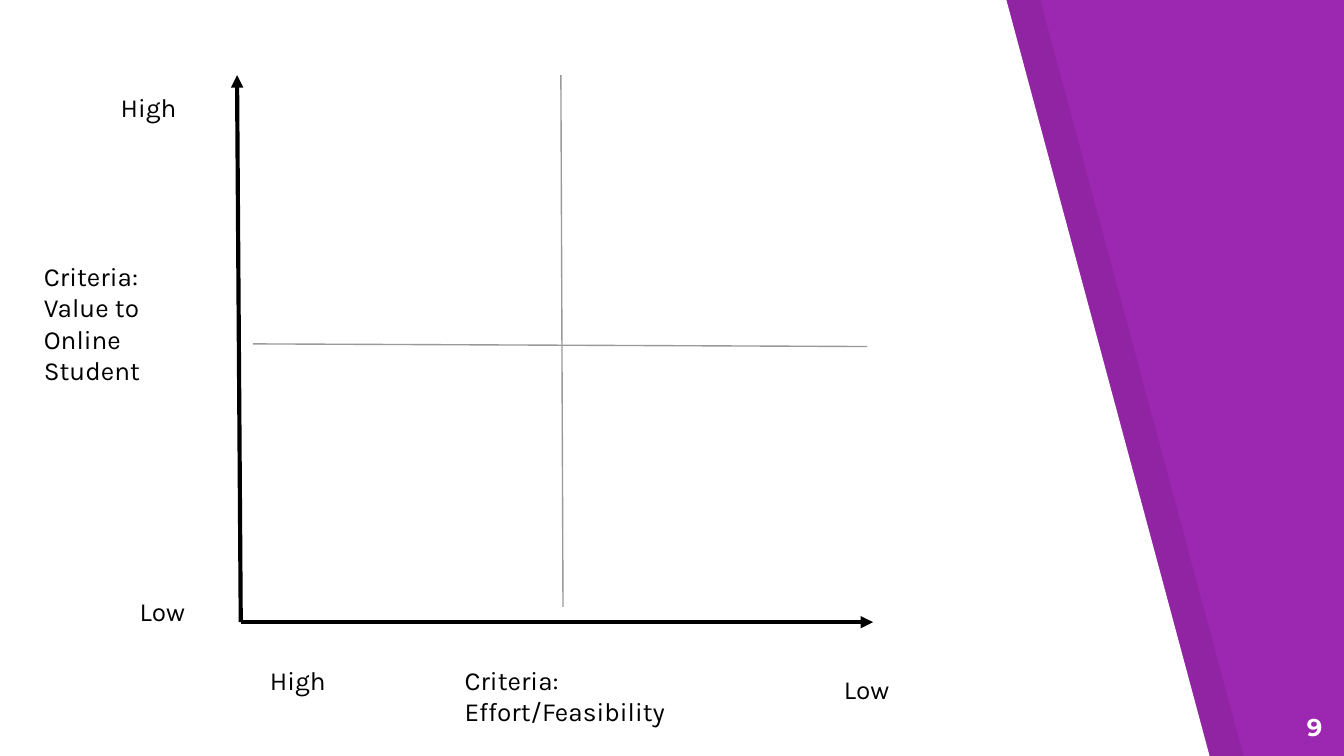
from lxml.etree import SubElement
from pptx import Presentation
from pptx.dml.color import RGBColor
from pptx.enum.shapes import MSO_CONNECTOR
from pptx.enum.text import MSO_ANCHOR, PP_ALIGN
from pptx.oxml.ns import qn
from pptx.util import Cm, Pt

PURPLE = RGBColor(0x9C, 0x27, 0xB0)
WHITE = RGBColor(0xFF, 0xFF, 0xFF)
BLACK = RGBColor(0x00, 0x00, 0x00)
GREY = RGBColor(0x99, 0x99, 0x99)

# Content: lengths in centimetres
PAGE_WIDTH, PAGE_HEIGHT = 25.4, 14.29
PANEL_TOP_EDGE, PANEL_BOTTOM_EDGE = 19.02, 22.86
BAND_OFFSET = 0.64

AXES = [  # start, end
    ((4.55, 11.76), (4.48, 1.42)),
    ((4.55, 11.76), (16.5, 11.76)),
]
DIVIDERS = [
    ((4.78, 6.5), (16.39, 6.55)),
    ((10.64, 11.47), (10.6, 1.42)),
]
LABELS = [  # text, left, top, width, height
    ("Low", 2.39, 11.0, 1.52, 0.76),
    ("High", 2.03, 1.48, 1.88, 0.76),
    ("High", 4.85, 12.3, 2.13, 0.76),
    ("Low", 15.7, 12.47, 2.31, 0.58),
    ("Criteria: Value to Online Student", 0.58, 4.67, 3.33, 2.36),
    ("Criteria: Effort/Feasibility", 8.53, 12.3, 4.85, 1.47),
]
PAGE_NUMBER = ("9", 23.72, 13.19, 1.52, 1.1)


def add_panel(page, left, color, opacity=None):
    """Slanted panel reaching from its left edge to the slanted right side."""
    corners = [(0, PAGE_HEIGHT), (PANEL_BOTTOM_EDGE, PAGE_HEIGHT), (PANEL_TOP_EDGE, 0)]
    builder = page.shapes.build_freeform(Cm(left), 0)
    builder.add_line_segments([(Cm(left + x), Cm(y)) for x, y in corners])
    panel = builder.convert_to_shape()
    panel.shadow.inherit = False
    panel.fill.solid()
    panel.fill.fore_color.rgb = color
    panel.line.fill.background()
    if opacity is not None:
        color_element = panel.fill._xPr.find(".//" + qn("a:srgbClr"))
        SubElement(color_element, qn("a:alpha"), val=str(opacity * 1000))


def add_line(page, start, end, color, width, arrow=False):
    line = page.shapes.add_connector(
        MSO_CONNECTOR.STRAIGHT, *(Cm(value) for value in start + end))
    line.line.color.rgb = color
    line.line.width = Pt(width)
    if arrow:
        SubElement(line.line._get_or_add_ln(), qn("a:tailEnd"), type="triangle")
    SubElement(line._element.spPr, qn("a:effectLst"))


def add_text(page, text, left, top, width, height, font="Karla", size=14,
             color=BLACK, bold=False, align=PP_ALIGN.LEFT, anchor=MSO_ANCHOR.TOP):
    box = page.shapes.add_textbox(Cm(left), Cm(top), Cm(width), Cm(height))
    frame = box.text_frame
    frame.word_wrap = True
    frame.vertical_anchor = anchor
    frame.margin_left = frame.margin_right = Cm(0.25)
    frame.margin_top = frame.margin_bottom = Cm(0.25)
    para = frame.paragraphs[0]
    para.text = text
    para.alignment = align
    para.font.name = font
    para.font.size = Pt(size)
    para.font.bold = bold
    para.font.color.rgb = color


def main():
    deck = Presentation()
    deck.slide_width, deck.slide_height = Cm(PAGE_WIDTH), Cm(PAGE_HEIGHT)
    page = deck.slides.add_slide(deck.slide_layouts[6])

    # Background: purple, a darker band, then the white panel
    page.background.fill.solid()
    page.background.fill.fore_color.rgb = PURPLE
    add_panel(page, BAND_OFFSET, BLACK, opacity=7)
    add_panel(page, 0, WHITE)

    # Page number
    add_text(page, *PAGE_NUMBER, font="Montserrat", size=13, color=WHITE, bold=True,
             align=PP_ALIGN.RIGHT, anchor=MSO_ANCHOR.MIDDLE)

    # Matrix: axes, labels and quadrant dividers
    for start, end in AXES:
        add_line(page, start, end, BLACK, 2.25, arrow=True)
    for label in LABELS:
        add_text(page, *label)
    for start, end in DIVIDERS:
        add_line(page, start, end, GREY, 0.75)

    deck.save("out.pptx")


if __name__ == "__main__":
    main()
